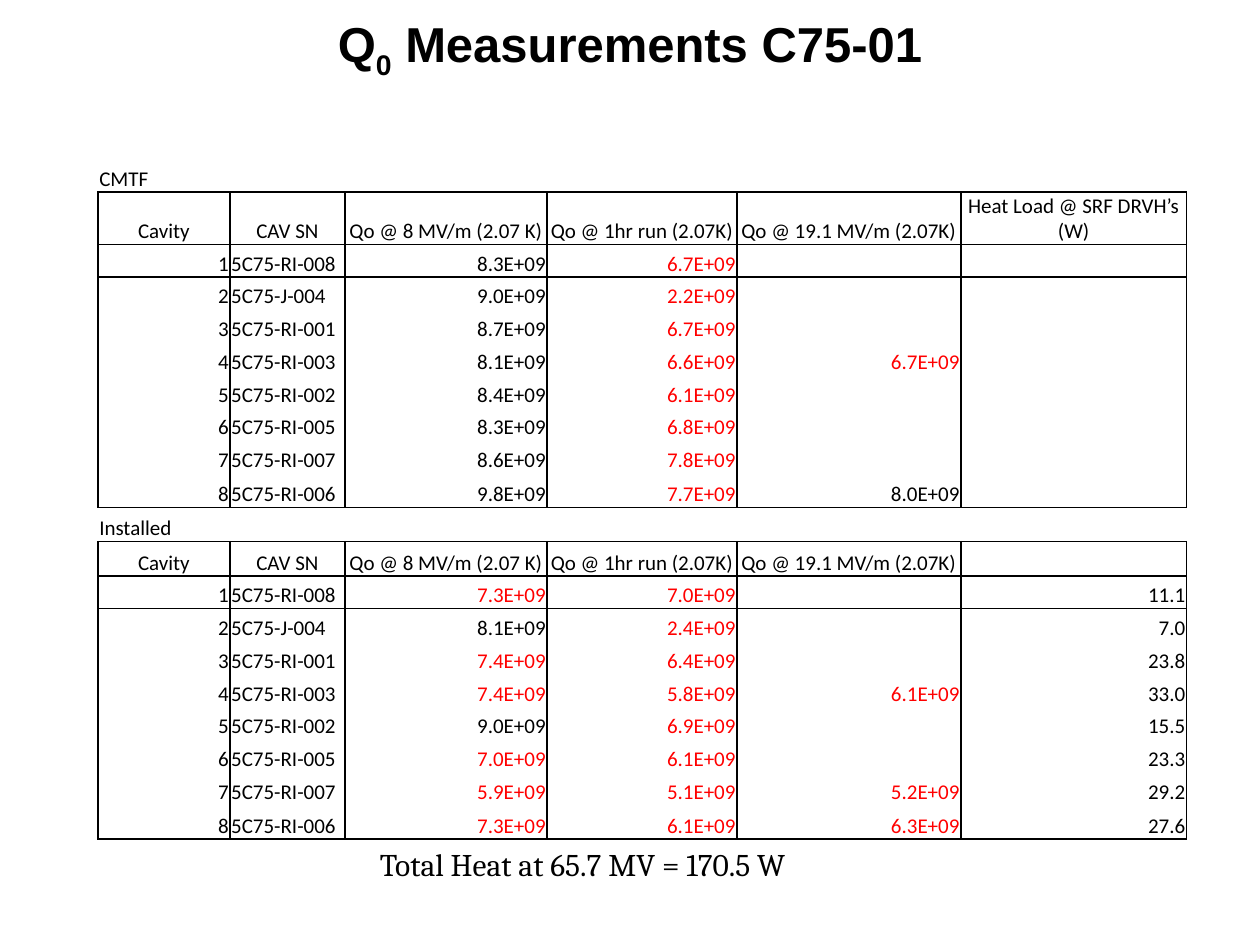
from dataclasses import dataclass

from lxml import etree
from pptx import Presentation
from pptx.dml.color import RGBColor
from pptx.enum.text import MSO_ANCHOR, PP_ALIGN
from pptx.oxml.ns import qn
from pptx.util import Pt

LEFT, MID, RIGHT = PP_ALIGN.LEFT, PP_ALIGN.CENTER, PP_ALIGN.RIGHT
CENTER, BOTTOM = MSO_ANCHOR.MIDDLE, MSO_ANCHOR.BOTTOM
PLAIN = "{2D5ABB26-0587-4C30-8999-92F81FD0307C}"  # table style without lines
LIMIT = 8e9  # a lower quality factor is shown in red


@dataclass(frozen=True)
class Theme:
    ink: str = "000000"
    low: str = "FF0000"
    head_font: str = "Arial"
    cell_font: str = "Calibri"
    note_font: str = "Cambria"
    head_size: float = 28
    cell_size: float = 12
    note_size: float = 18
    line: float = 1


@dataclass(frozen=True)
class Box:
    left: float
    top: float
    width: float
    height: float


@dataclass(frozen=True)
class Block:
    name: str
    tall: float  # height of the heading row
    last: str  # heading of the last column
    q_low: list
    q_run: list
    q_high: dict  # by cavity number
    heat: list


THEME = Theme()
HEADS = ["Cavity", "CAV SN", "Qo @ 8 MV/m (2.07 K)", "Qo @ 1hr run (2.07K)",
         "Qo @ 19.1 MV/m (2.07K)"]
SERIALS = ["RI-008", "J-004", "RI-001", "RI-003",
           "RI-002", "RI-005", "RI-007", "RI-006"]
WIDTHS = [75.4, 65.7, 115.5, 108.5, 128, 129]
ROW, EDGE_ROW = 18.7, 19.6
BLOCKS = [
    Block("CMTF", 30, "Heat Load @ SRF DRVH’s (W)",
          [8.3, 9.0, 8.7, 8.1, 8.4, 8.3, 8.6, 9.8],
          [6.7, 2.2, 6.7, 6.6, 6.1, 6.8, 7.8, 7.7],
          {4: 6.7, 8: 8.0}, []),
    Block("Installed", EDGE_ROW, "",
          [7.3, 8.1, 7.4, 7.4, 9.0, 7.0, 5.9, 7.3],
          [7.0, 2.4, 6.4, 5.8, 6.9, 6.1, 5.1, 6.1],
          {4: 6.1, 7: 5.2, 8: 6.3},
          [11.1, 7.0, 23.8, 33.0, 15.5, 23.3, 29.2, 27.6]),
]


@dataclass(frozen=True)
class Row:
    texts: list
    aligns: list
    sides: str  # any of L, R, T, B
    height: float


def show_q(value: float | None) -> str:
    return "" if value is None else f"{value:.1f}E+09"


def block_rows(block: Block, first: bool) -> list[Row]:
    rows = [Row([block.name] + [""] * 5, [LEFT] * 6, "B" if first else "TB", EDGE_ROW),
            Row(HEADS + [block.last], [MID] * 6, "LRTB", block.tall)]
    count = len(SERIALS)
    for i, serial in enumerate(SERIALS):
        texts = [str(i + 1), f"5C75-{serial}", show_q(block.q_low[i]),
                 show_q(block.q_run[i]), show_q(block.q_high.get(i + 1)),
                 f"{block.heat[i]:.1f}" if block.heat else ""]
        sides = "LR" + ("T" if i == 0 else "") + ("B" if i == count - 1 else "")
        rows.append(Row(texts, [RIGHT, LEFT] + [RIGHT] * 4, sides,
                        EDGE_ROW if i == count - 1 else ROW))
    return rows


def style(font, face: str, size: float, color: str, bold: bool = False) -> None:
    font.name, font.size, font.bold = face, Pt(size), bold
    font.color.rgb = RGBColor.from_string(color)


def add_sides(cell, sides: str) -> None:
    props = cell._tc.get_or_add_tcPr()
    for side in sides:
        line = etree.SubElement(props, qn(f"a:ln{side}"), w=str(Pt(THEME.line)))
        fill = etree.SubElement(line, qn("a:solidFill"))
        etree.SubElement(fill, qn("a:srgbClr"), val=THEME.ink)


def fill_cell(cell, text: str, align, sides: str) -> None:
    cell.margin_left = cell.margin_right = cell.margin_top = Pt(0.72)
    cell.margin_bottom = Pt(0)
    cell.vertical_anchor = BOTTOM
    add_sides(cell, sides)
    cell.fill.background()
    cell.text_frame.text = text
    para = cell.text_frame.paragraphs[0]
    para.alignment = align
    for run in para.runs:
        low = text.endswith("E+09") and float(text) < LIMIT
        style(run.font, THEME.cell_font, THEME.cell_size, THEME.low if low else THEME.ink)
    if not text:  # keeps an empty cell from stretching its row
        end = para._p.get_or_add_endParaRPr()
        end.set("sz", str(int(THEME.cell_size * 100)))


def add_grid(slide, box: Box, rows: list[Row]) -> None:
    frame = slide.shapes.add_table(len(rows), len(WIDTHS), Pt(box.left), Pt(box.top),
                                   Pt(box.width), Pt(box.height))
    table = frame.table
    table.first_row = table.horz_banding = False
    table._tbl.tblPr.find(qn("a:tableStyleId")).text = PLAIN
    for col, width in zip(table.columns, WIDTHS):
        col.width = Pt(width)
    for r, row in enumerate(rows):
        table.rows[r].height = Pt(row.height)
        for c, (text, align) in enumerate(zip(row.texts, row.aligns)):
            fill_cell(table.cell(r, c), text, align, row.sides)


def add_box(slide, box: Box, wrap: bool):
    shape = slide.shapes.add_textbox(Pt(box.left), Pt(box.top),
                                     Pt(box.width), Pt(box.height))
    shape.text_frame.word_wrap = wrap
    return shape.text_frame


def main() -> None:
    deck = Presentation()
    deck.slide_width, deck.slide_height = Pt(720), Pt(540)
    slide = deck.slides.add_slide(deck.slide_layouts[6])

    # Title with a subscript
    frame = add_box(slide, Box(54, 0, 612, 54), True)
    frame.vertical_anchor = CENTER
    para = frame.paragraphs[0]
    para.alignment = MID
    for text, base in (("Q", 0), ("0", -25000), (" Measurements C75-01", 0)):
        run = para.add_run()
        run.text = text
        style(run.font, THEME.head_font, THEME.head_size, THEME.ink, True)
        if base:
            run.font._element.set("baseline", str(base))

    # Both blocks in one table
    rows = [row for i, block in enumerate(BLOCKS) for row in block_rows(block, i == 0)]
    add_grid(slide, Box(56, 90, sum(WIDTHS), sum(row.height for row in rows)), rows)

    # Total below the table
    frame = add_box(slide, Box(210, 479.5, 260, 29), False)
    frame.text = "Total Heat at 65.7 MV = 170.5 W"
    style(frame.paragraphs[0].runs[0].font, THEME.note_font, THEME.note_size, THEME.ink)

    deck.save("out.pptx")


if __name__ == "__main__":
    main()
